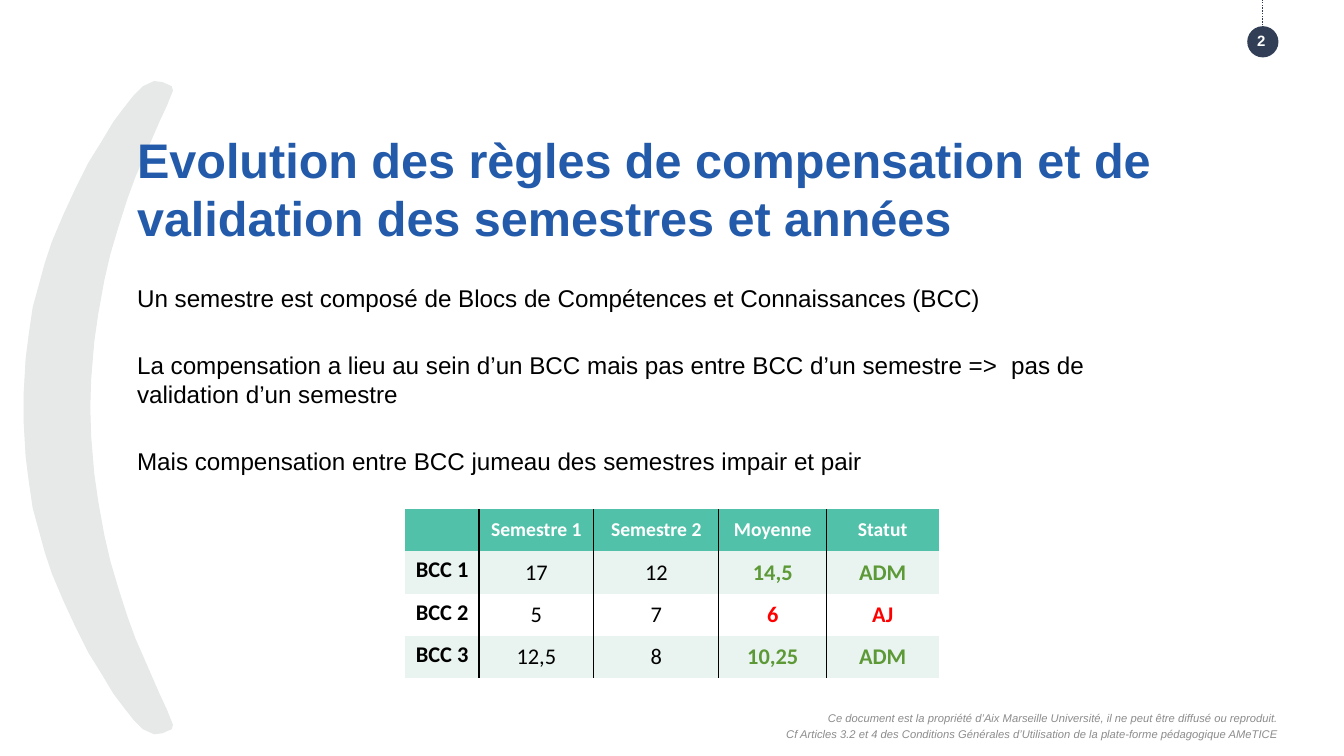
from dataclasses import dataclass

from lxml.etree import SubElement
from pptx import Presentation
from pptx.dml.color import RGBColor
from pptx.enum.dml import MSO_LINE
from pptx.enum.shapes import MSO_CONNECTOR, MSO_SHAPE
from pptx.enum.text import MSO_ANCHOR, PP_ALIGN
from pptx.oxml import parse_xml
from pptx.oxml.ns import nsdecls, qn
from pptx.table import _Cell
from pptx.util import Inches, Pt

BLUE = RGBColor(0x23, 0x5B, 0xAA)
NAVY = RGBColor(0x31, 0x3E, 0x56)
BLACK = RGBColor(0, 0, 0)
WHITE = RGBColor(0xFF, 0xFF, 0xFF)
GREY = RGBColor(0x8C, 0x8C, 0x8C)
PALE_GREY = RGBColor(0xE7, 0xE8, 0xE8)
TEAL = RGBColor(0x51, 0xC2, 0xA9)
PALE_TEAL = RGBColor(0xE9, 0xF4, 0xF1)
GREEN = RGBColor(0x5D, 0x99, 0x36)
RED = RGBColor(0xFF, 0, 0)

NO_GRID_STYLE = "{2D5ABB26-0587-4C30-8999-92F81FD0307C}"


@dataclass
class Style:
    size: float
    color: RGBColor
    bold: bool = False
    italic: bool = False
    align: PP_ALIGN = PP_ALIGN.LEFT
    font: str = "Arial"


@dataclass
class TextBlock:
    left: float
    top: float
    width: float
    height: float
    lines: list[str]
    style: Style
    gap: float = 0
    tab: float = 0
    anchor: MSO_ANCHOR = MSO_ANCHOR.TOP


@dataclass
class BlockResult:
    name: str
    semester1: str
    semester2: str
    mean: str
    status: str

    @property
    def color(self) -> RGBColor:
        return GREEN if self.status == "ADM" else RED


def add_run(p, text: str, style: Style) -> None:
    p.alignment = style.align
    r = p.add_run()
    r.text = text
    f = r.font
    f.name, f.size, f.bold, f.italic = style.font, Pt(style.size), style.bold, style.italic
    f.color.rgb = style.color


def add_text(s, block: TextBlock) -> None:
    sp = s.shapes.add_textbox(*map(Inches, (block.left, block.top, block.width, block.height)))
    tf = sp.text_frame
    tf.word_wrap = True
    tf.vertical_anchor = block.anchor
    tf.margin_left = tf.margin_right = tf.margin_top = tf.margin_bottom = 0
    for i, line in enumerate(block.lines):
        p = tf.add_paragraph() if i else tf.paragraphs[0]
        if i:
            p.space_before = Pt(block.gap)
        if "\t" in line:
            tabs = SubElement(p._p.get_or_add_pPr(), qn("a:tabLst"))
            SubElement(tabs, qn("a:tab"), pos=str(Inches(block.tab)), algn="l")
        add_run(p, line, block.style)


def add_crescent(s) -> None:
    # Upper half from the outer edge to the inner edge; the lower half mirrors it
    upper = [
        (0.24, 4.05), (0.24, 3.9), (0.26, 3.56), (0.29, 3.32), (0.33, 3.05), (0.39, 2.83),
        (0.45, 2.61), (0.52, 2.4), (0.63, 2.14), (0.75, 1.88), (0.88, 1.62), (1.01, 1.41),
        (1.13, 1.21), (1.22, 1.09), (1.33, 0.95), (1.42, 0.86), (1.53, 0.81), (1.61, 0.82),
        (1.7, 0.86), (1.71, 0.9), (1.65, 1.05), (1.58, 1.2), (1.48, 1.43), (1.34, 1.75),
        (1.26, 1.97), (1.17, 2.25), (1.09, 2.52), (1.03, 2.78), (0.97, 3.11), (0.93, 3.39),
        (0.9, 3.75), (0.89, 4.05),
    ]
    lower = [(x, 8.09 - y) for x, y in reversed(upper)]
    points = [(Inches(x), Inches(y)) for x, y in upper + lower]
    builder = s.shapes.build_freeform(*points[0])
    builder.add_line_segments(points[1:])
    sp = builder.convert_to_shape()
    sp.shadow.inherit = False
    sp.fill.solid()
    sp.fill.fore_color.rgb = PALE_GREY
    sp.line.color.rgb = PALE_GREY
    sp.line.width = Pt(0.75)


def add_page_badge(s, number: str) -> None:
    line = s.shapes.add_connector(
        MSO_CONNECTOR.STRAIGHT, Inches(12.52), Inches(0.28), Inches(12.52), 0)
    line.line.color.rgb = NAVY
    line.line.width = Pt(1)
    line.line.dash_style = MSO_LINE.ROUND_DOT
    SubElement(line._element.spPr, qn("a:effectLst"))
    sp = s.shapes.add_shape(
        MSO_SHAPE.OVAL, Inches(12.37), Inches(0.26), Inches(0.31), Inches(0.31))
    sp.shadow.inherit = False
    sp.fill.solid()
    sp.fill.fore_color.rgb = NAVY
    sp.line.fill.background()
    add_text(s, TextBlock(12.18, 0.33, 0.66, 0.15, [number],
                          Style(10.7, WHITE, bold=True, align=PP_ALIGN.CENTER),
                          anchor=MSO_ANCHOR.MIDDLE))


def add_border(cell: _Cell, side: str) -> None:
    border = parse_xml(
        f'<a:{side} {nsdecls("a")} w="{Pt(1)}"><a:solidFill>'
        f'<a:srgbClr val="{BLACK}"/></a:solidFill></a:{side}>')
    cell._tc.get_or_add_tcPr().insert(0, border)


def add_results_table(s, header: list[str], results: list[BlockResult]) -> None:
    widths = [0.73, 1.14, 1.24, 1.07, 1.11]
    row_height = 0.42
    rows = len(results) + 1
    table = s.shapes.add_table(rows, len(widths), Inches(4.02), Inches(5.05),
                               Inches(sum(widths)), Inches(row_height * rows)).table
    table._tbl.tblPr.find(qn("a:tableStyleId")).text = NO_GRID_STYLE
    table.first_row = table.horz_banding = False
    for column, width in zip(table.columns, widths):
        column.width = Inches(width)
    for row in table.rows:
        row.height = Inches(row_height)

    def fill_cell(row: int, col: int, text: str, fill: RGBColor, size: float,
                  color: RGBColor, bold: bool) -> None:
        cell = table.cell(row, col)
        cell.fill.solid()
        cell.fill.fore_color.rgb = fill
        if col:
            cell.vertical_anchor = MSO_ANCHOR.MIDDLE
        else:
            cell.margin_left = cell.margin_right = Inches(0.05)
        if text:
            add_run(cell.text_frame.paragraphs[0], text,
                    Style(size, color, bold, align=PP_ALIGN.CENTER, font="Calibri"))
        # Vertical rules follow the first and third columns
        if col in (0, 2):
            add_border(cell, "lnR")
        elif col in (1, 3):
            add_border(cell, "lnL")

    for col, title in enumerate(header):
        fill_cell(0, col, title, TEAL, 14, WHITE, True)
    for row, b in enumerate(results, 1):
        fill = PALE_TEAL if row % 2 else WHITE
        for col, text in enumerate((b.name, b.semester1, b.semester2, b.mean, b.status)):
            fill_cell(row, col, text, fill, 16, b.color if col > 2 else BLACK, col not in (1, 2))


def main() -> None:
    prs = Presentation()
    prs.slide_width, prs.slide_height = Inches(13.33), Inches(7.5)
    s = prs.slides.add_slide(prs.slide_layouts[6])

    # Decoration and page number
    add_crescent(s)
    add_page_badge(s, "2")

    # Title, body and footer
    blocks = [
        TextBlock(1.36, 1.29, 11.9, 0.7,
                  ["Evolution des règles de compensation et de validation des semestres et années"],
                  Style(34.7, BLUE, bold=True)),
        TextBlock(1.36, 2.81, 10.13, 1.89, [
            "Un semestre est composé de Blocs de Compétences et Connaissances (BCC)",
            "La compensation a lieu au sein d’un BCC mais pas entre BCC d’un semestre => "
            "\tpas de validation d’un semestre",
            "Mais compensation entre BCC jumeau des semestres impair et pair",
        ], Style(17.3, BLACK), gap=27, tab=8.67),
        TextBlock(4.19, 7.06, 8.49, 0.36, [
            "Ce document est la propriété d’Aix Marseille Université, "
            "il ne peut être diffusé ou reproduit.",
            "Cf Articles 3.2 et 4 des Conditions Générales d’Utilisation "
            "de la plate-forme pédagogique AMeTICE",
        ], Style(8, GREY, italic=True, align=PP_ALIGN.RIGHT), gap=1.6),
    ]
    for block in blocks:
        add_text(s, block)

    # Results by block
    add_results_table(s, ["", "Semestre 1", "Semestre 2", "Moyenne", "Statut"], [
        BlockResult("BCC 1", "17", "12", "14,5", "ADM"),
        BlockResult("BCC 2", "5", "7", "6", "AJ"),
        BlockResult("BCC 3", "12,5", "8", "10,25", "ADM"),
    ])
    prs.save("out.pptx")


if __name__ == "__main__":
    main()
